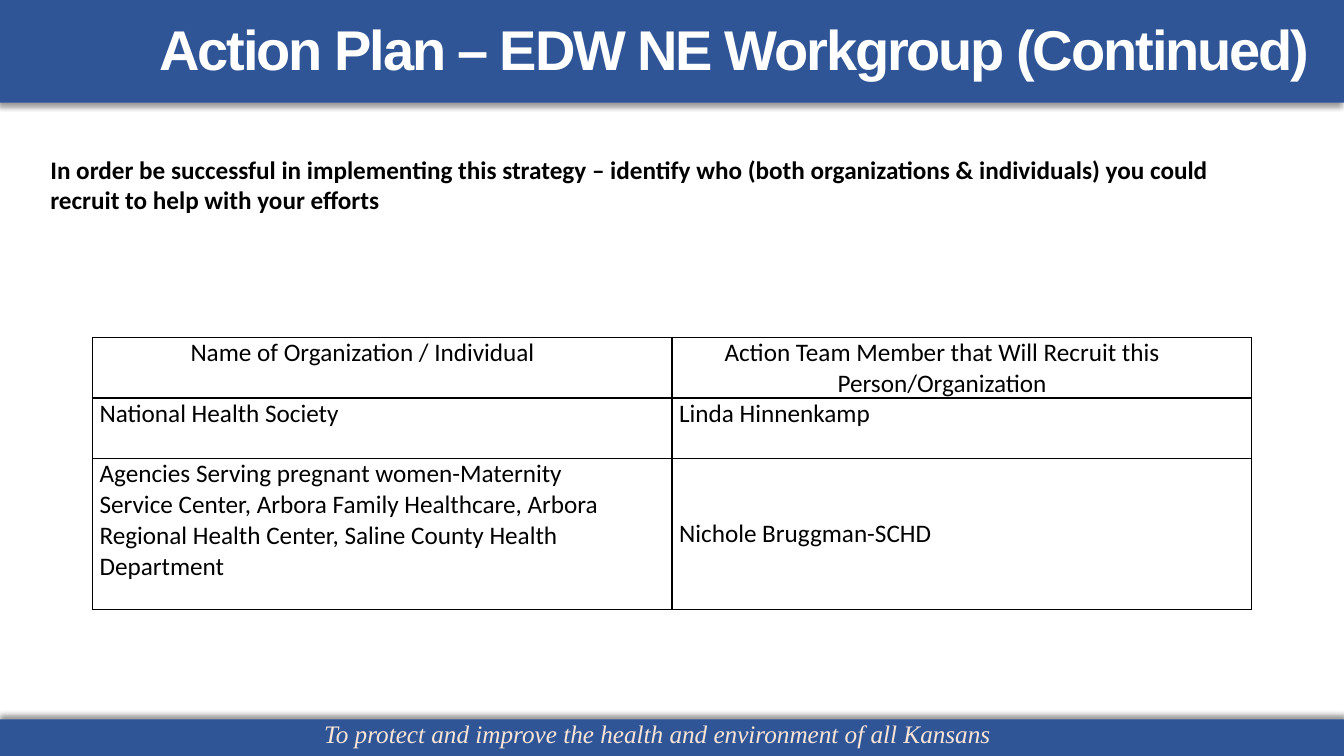
from pptx import Presentation
from pptx import util as u
from pptx.dml.color import RGBColor
from pptx.enum import shapes, text
from pptx.oxml import parse_xml

NS = 'xmlns:a="http://schemas.openxmlformats.org/drawingml/2006/main"'
BLUE, BLACK = "2F5597", "000000"


def tint(code):
    return RGBColor.from_string(code)


def write(par, words, face, size, hue, bold=False, slant=False):
    run = par.add_run()
    run.text = words
    font = run.font
    font.name, font.size, font.bold, font.italic = face, u.Pt(size), bold, slant
    font.color.rgb = tint(hue)
    return run


def frame(slide, box, left=0.25, right=0.25, top=0.13):
    """Add a wrapping text box and return its text frame."""
    area = slide.shapes.add_textbox(*map(u.Cm, box)).text_frame
    area.word_wrap = True
    area.margin_left, area.margin_right = u.Cm(left), u.Cm(right)
    area.margin_top = area.margin_bottom = u.Cm(top)
    return area


def band(slide, box, angle):
    """Add a blue bar with a soft shadow cast at the given angle."""
    bar = slide.shapes.add_shape(shapes.MSO_SHAPE.RECTANGLE, *map(u.Cm, box))
    bar.shadow.inherit = False
    bar.fill.solid()
    bar.fill.fore_color.rgb = tint(BLUE)
    bar.line.fill.background()
    glow = bar._element.spPr.find("{*}effectLst")
    glow.append(parse_xml(
        f'<a:outerShdw {NS} blurRad="50800" dist="38100" dir="{angle * 60000}">'
        f'<a:srgbClr val="{BLACK}"><a:alpha val="40000"/></a:srgbClr></a:outerShdw>'))


def header(slide, x, y, w, h):
    band(slide, (x, y, w, h), 135)
    area = frame(slide, (x + 3.43, y + 0.61, w - 3.67, 1.52), 0, 0.64, 0)
    area.vertical_anchor = text.MSO_ANCHOR.MIDDLE
    par = area.paragraphs[0]
    par.alignment, par.line_spacing = text.PP_ALIGN.RIGHT, 0.85
    run = write(par, "Action Plan – EDW NE Workgroup (Continued)",
                "Arial", 40, "FFFFFF", bold=True)
    run._r.get_or_add_rPr().set("spc", "-150")


def footer(slide, x, y, w, h):
    band(slide, (x, y, w, h), 270)
    area = frame(slide, (x + 7.92, y - 0.15, 17.96, 1.02))
    write(area.paragraphs[0],
          "To protect and improve the health and environment of all Kansans",
          "Times New Roman", 18, "FBE5D6", slant=True)


def intro(slide, *box):
    area = frame(slide, box, left=0.89, right=0.8)
    write(area.paragraphs[0],
          "In order be successful in implementing this strategy – identify who "
          "(both organizations & individuals) you could recruit to help with "
          "your efforts", "Calibri", 18, BLACK, bold=True)


def edge(cell):
    """Draw a thin black line on all four sides of a cell."""
    props = cell._tc.get_or_add_tcPr()
    for spot, side in enumerate("LRTB"):
        props.insert(spot, parse_xml(
            f'<a:ln{side} {NS} w="12700"><a:solidFill>'
            f'<a:srgbClr val="{BLACK}"/></a:solidFill></a:ln{side}>'))


def grid(slide, x, y, w, h):
    rows = [
        ("Name of Organization / Individual",
         "Action Team Member that Will Recruit this Person/Organization"),
        ("National Health Society", "Linda Hinnenkamp"),
        ("Agencies Serving pregnant women-Maternity Service Center, Arbora "
         "Family Healthcare, Arbora Regional Health Center, Saline County "
         "Health Department", "Nichole Bruggman-SCHD"),
    ]
    table = slide.shapes.add_table(len(rows), 2, *map(u.Cm, (x, y, w, h))).table
    table.first_row = table.horz_banding = False
    for row, tall in zip(table.rows, (1.53, 1.53, h - 3.06)):
        row.height = u.Cm(tall)
    for r, words in enumerate(rows):
        for c, word in enumerate(words):
            cell = table.cell(r, c)
            cell.fill.background()
            edge(cell)
            cell.margin_left, cell.margin_right = u.Cm(0.18), u.Cm(1.17)
            cell.margin_top = cell.margin_bottom = 0
            par = cell.text_frame.paragraphs[0]
            if r == 0:
                par.alignment = text.PP_ALIGN.CENTER
            write(par, word, "Calibri", 18, BLACK)
    # The last name sits halfway down its tall row
    table.cell(2, 1).vertical_anchor = text.MSO_ANCHOR.MIDDLE


def main():
    deck = Presentation()
    deck.slide_width, deck.slide_height = u.Cm(33.87), u.Cm(19.05)
    slide = deck.slides.add_slide(deck.slide_layouts[6])
    header(slide, 0, -0.03, 33.87, 2.62)
    footer(slide, 0, 18.13, 33.87, 0.92)
    intro(slide, 0.38, 3.76, 32.41, 1.8)
    grid(slide, 2.33, 8.5, 29.21, 6.86)
    deck.save("out.pptx")


if __name__ == "__main__":
    main()
